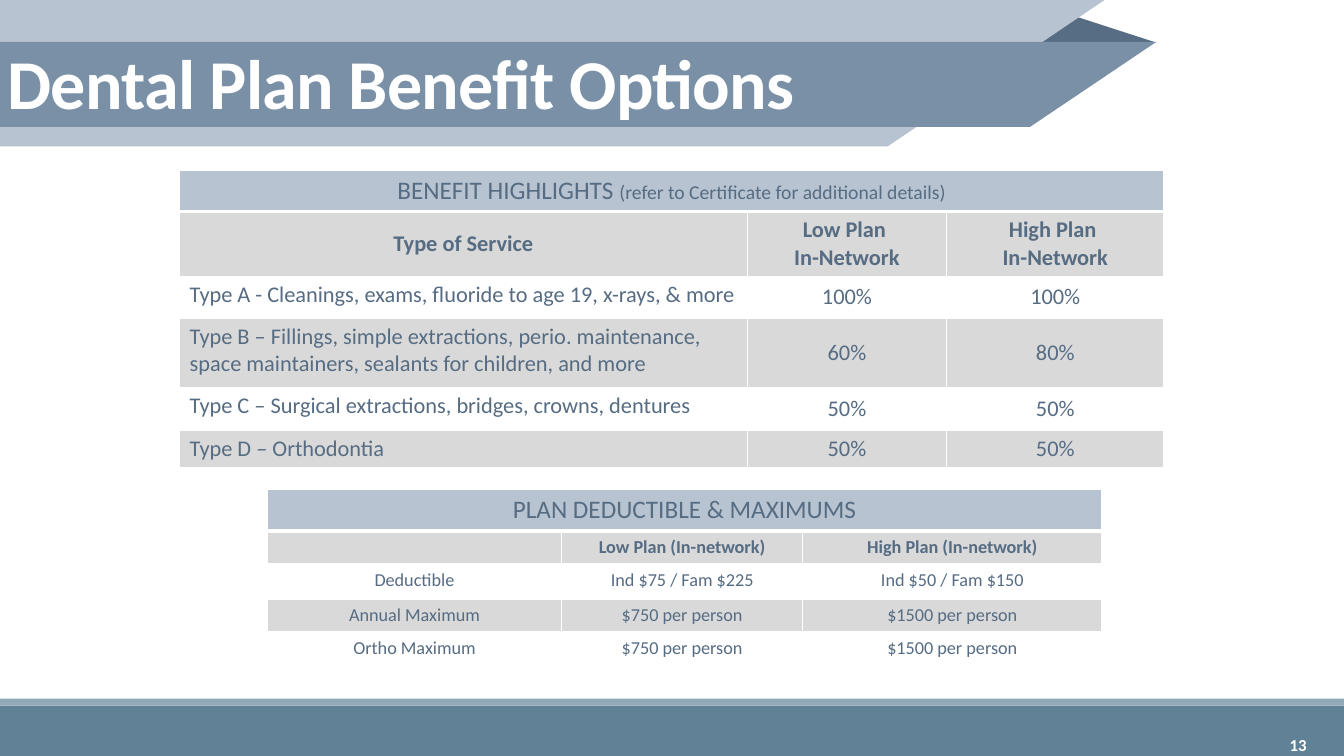
from dataclasses import dataclass
from lxml.etree import SubElement
from pptx import Presentation
from pptx.dml.color import RGBColor
from pptx.enum.shapes import MSO_SHAPE
from pptx.enum.text import MSO_ANCHOR, PP_ALIGN
from pptx.oxml.ns import qn
from pptx.util import Pt

WHITE = RGBColor(0xFF, 0xFF, 0xFF)
SLATE = RGBColor(0x56, 0x6C, 0x83)
FOLD = RGBColor(0x56, 0x6D, 0x83)
PALE_BLUE = RGBColor(0xB7, 0xC3, 0xD0)
BAND_BLUE = RGBColor(0x79, 0x90, 0xA7)
FOOTER = RGBColor(0x61, 0x81, 0x97)
FOOTER_EDGE = RGBColor(0x92, 0xA9, 0xB9)
GREY = RGBColor(0xD9, 0xD9, 0xD9)
FONT = "Calibri"
WIDTH, HEIGHT = 960, 540


@dataclass
class Block:
    kind: MSO_SHAPE
    left: float
    top: float
    width: float
    height: float
    color: RGBColor
    flipped: bool = False


@dataclass
class PlanTable:
    left: float
    top: float
    widths: list[float]
    heights: list[float]
    heading: list[tuple[str, float]]
    rows: list[list[str]]
    size: float
    label_align: PP_ALIGN
    value_anchor: MSO_ANCHOR


BLOCKS = [
    # Footer
    Block(MSO_SHAPE.RECTANGLE, 0, 504, WIDTH, 36, FOOTER),
    Block(MSO_SHAPE.RECTANGLE, 0, 499, WIDTH, 5, FOOTER_EDGE),
    # Title ribbon
    Block(MSO_SHAPE.ISOSCELES_TRIANGLE, 735, 10.4, 90.8, 20, FOLD),
    Block(MSO_SHAPE.RECTANGLE, 0, 0, 634.2, 104.6, PALE_BLUE),
    Block(MSO_SHAPE.RIGHT_TRIANGLE, 634, 0, 155, 104.6, PALE_BLUE, True),
    Block(MSO_SHAPE.RECTANGLE, 0, 30, 736, 60.6, BAND_BLUE),
    Block(MSO_SHAPE.RIGHT_TRIANGLE, 735.8, 30, 90, 60.6, BAND_BLUE, True),
]

TABLES = [
    PlanTable(
        128.3, 121.9, [405.4, 142.6, 155], [29.2, 46.4, 29.8, 49.5, 30.4, 26.4],
        [("BENEFIT HIGHLIGHTS ", 18),
         ("(refer to Certificate for additional details)", 14)],
        [["Type of Service", "Low Plan \nIn-Network", "High Plan \nIn-Network"],
         ["Type A - Cleanings, exams, fluoride to age 19, x-rays, & more", "100%", "100%"],
         ["Type B – Fillings, simple extractions, perio. maintenance, "
          "space maintainers, sealants for children, and more", "60%", "80%"],
         ["Type C – Surgical extractions, bridges, crowns, dentures", "50%", "50%"],
         ["Type D – Orthodontia", "50%", "50%"]],
        16, PP_ALIGN.LEFT, MSO_ANCHOR.MIDDLE),
    PlanTable(
        191, 349.9, [210, 172.4, 213.6], [29.2, 23.6, 25.4, 23.2, 23.2],
        [("PLAN DEDUCTIBLE & MAXIMUMS", 18)],
        [["", "Low Plan (In-network)", "High Plan (In-network)"],
         ["Deductible", "Ind $75 / Fam $225", "Ind $50 / Fam $150"],
         ["Annual Maximum", "$750 per person", "$1500 per person"],
         ["Ortho Maximum", "$750 per person", "$1500 per person"]],
        13, PP_ALIGN.CENTER, MSO_ANCHOR.TOP),
]


def add_run(p, text: str, size: float, color: RGBColor, bold: bool = False):
    r = p.add_run()
    r.text = text
    r.font.name = FONT
    r.font.size = Pt(size)
    r.font.bold = bold
    r.font.color.rgb = color
    return r


def add_block(s, block: Block) -> None:
    sp = s.shapes.add_shape(block.kind, Pt(block.left), Pt(block.top),
                            Pt(block.width), Pt(block.height))
    sp.shadow.inherit = False
    sp.fill.solid()
    sp.fill.fore_color.rgb = block.color
    sp.line.fill.background()
    if block.kind == MSO_SHAPE.ISOSCELES_TRIANGLE:
        sp.adjustments[0] = 0.32
    if block.flipped:
        sp.rotation = 180
        sp._element.spPr.find(qn("a:xfrm")).set("flipH", "1")


def add_text(s, left: float, top: float, width: float, height: float,
             text: str, size: float, anchor: MSO_ANCHOR, align: PP_ALIGN):
    tf = s.shapes.add_textbox(Pt(left), Pt(top), Pt(width), Pt(height)).text_frame
    tf.word_wrap = True
    tf.vertical_anchor = anchor
    p = tf.paragraphs[0]
    p.alignment = align
    return p, add_run(p, text, size, WHITE, True)


def style_cell(cell, color: RGBColor, bottom: float = 1) -> None:
    tc_pr = cell._tc.get_or_add_tcPr()
    for side, width in (("L", 1), ("R", 1), ("T", 1), ("B", bottom)):
        ln = SubElement(tc_pr, qn(f"a:ln{side}"), w=str(Pt(width)))
        fill = SubElement(ln, qn("a:solidFill"))
        SubElement(fill, qn("a:srgbClr"), val=str(WHITE))
    cell.fill.solid()
    cell.fill.fore_color.rgb = color


def fill_cell(cell, text: str, size: float, bold: bool, align: PP_ALIGN) -> None:
    tf = cell.text_frame
    for i, line in enumerate(text.split("\n")):
        p = tf.add_paragraph() if i else tf.paragraphs[0]
        p.alignment = align
        if line:
            add_run(p, line, size, SLATE, bold)
        else:
            p._p.get_or_add_endParaRPr().set("sz", str(size * 100))


def add_plan_table(s, plan: PlanTable) -> None:
    table = s.shapes.add_table(
        len(plan.heights), len(plan.widths), Pt(plan.left), Pt(plan.top),
        Pt(sum(plan.widths)), Pt(sum(plan.heights))).table
    table.first_row = table.horz_banding = False
    for column, width in zip(table.columns, plan.widths):
        column.width = Pt(width)
    for row, height in zip(table.rows, plan.heights):
        row.height = Pt(height)

    # Heading across all columns
    for cell in table.rows[0].cells:
        style_cell(cell, PALE_BLUE, 3)
    heading = table.cell(0, 0)
    heading.merge(table.cell(0, len(plan.widths) - 1))
    p = heading.text_frame.paragraphs[0]
    p.alignment = PP_ALIGN.CENTER
    for text, size in plan.heading:
        add_run(p, text, size, SLATE)

    # Column titles and banded body
    for i, values in enumerate(plan.rows, start=1):
        for j, text in enumerate(values):
            cell = table.cell(i, j)
            is_label = i > 1 and j == 0
            style_cell(cell, GREY if i % 2 else WHITE)
            cell.vertical_anchor = MSO_ANCHOR.TOP if is_label else plan.value_anchor
            fill_cell(cell, text, plan.size, i == 1,
                      plan.label_align if is_label else PP_ALIGN.CENTER)


def main() -> None:
    prs = Presentation()
    prs.slide_width, prs.slide_height = Pt(WIDTH), Pt(HEIGHT)
    s = prs.slides.add_slide(prs.slide_layouts[6])

    for block in BLOCKS:
        add_block(s, block)
    for plan in TABLES:
        add_plan_table(s, plan)

    # Title and slide number
    p, r = add_text(s, -2, 34, 879, 77, "Dental Plan Benefit Options", 50,
                    MSO_ANCHOR.TOP, PP_ALIGN.LEFT)
    p.line_spacing = 0.85
    r.font._element.set("spc", "-50")
    add_text(s, 837.4, 517.7, 103, 28.8, "13", 12, MSO_ANCHOR.MIDDLE, PP_ALIGN.RIGHT)

    prs.save("out.pptx")


if __name__ == "__main__":
    main()
